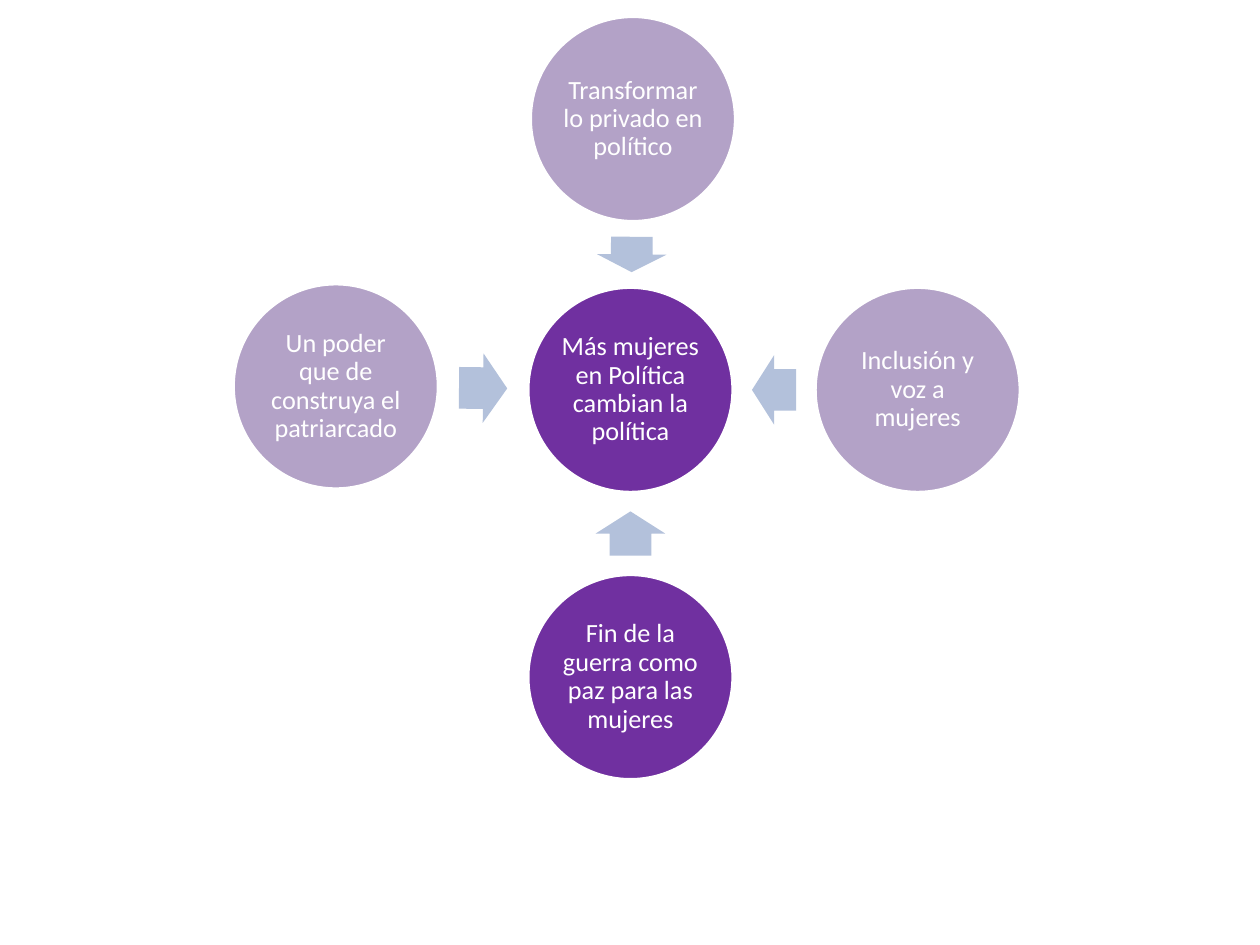
import math
from dataclasses import dataclass

import pptx
import pptx.dml.color
import pptx.enum.shapes
import pptx.enum.text
import pptx.util

Cm = pptx.util.Cm
Pt = pptx.util.Pt
Color = pptx.dml.color.RGBColor
Shape = pptx.enum.shapes.MSO_SHAPE


@dataclass(frozen=True)
class Theme:
    strong: Color = Color(0x70, 0x30, 0xA0)
    soft: Color = Color(0xB3, 0xA2, 0xC7)
    arrow: Color = Color(0xB3, 0xC1, 0xDB)
    white: Color = Color(0xFF, 0xFF, 0xFF)
    font: str = "Calibri"
    size: Pt = Pt(15)
    outline: Pt = Pt(2)


THEME = Theme()
DIAMETER = 4.14
ARROW_HEIGHT = 1.4
ARROW_SHARE = 0.54

CENTER = (12.71, 7.86)
CENTER_TEXT = "Más mujeres en Política cambian la política"
IDEAS = [
    ((6.77, 7.79), "Un poder que de construya el patriarcado", THEME.soft),
    ((18.5, 7.86), "Inclusión y voz a mujeres", THEME.soft),
    ((12.71, 13.65), "Fin de la guerra como paz para las mujeres", THEME.strong),
    ((12.76, 2.4), "Transformar lo privado en político", THEME.soft),
]


def apply(target, values):
    for name, value in values.items():
        setattr(target, name, value)


def add_centered(page, kind, middle, width, height, fill):
    x, y = middle
    shape = page.shapes.add_shape(
        kind, Cm(x - width / 2), Cm(y - height / 2), Cm(width), Cm(height))
    shape.shadow.inherit = False
    shape.fill.solid()
    shape.fill.fore_color.rgb = fill
    return shape


def add_circle(page, middle, text, fill):
    circle = add_centered(page, Shape.OVAL, middle, DIAMETER, DIAMETER, fill)
    circle.line.color.rgb = THEME.white
    circle.line.width = THEME.outline
    frame = circle.text_frame
    margins = ("margin_left", "margin_top", "margin_right", "margin_bottom")
    apply(frame, dict.fromkeys(margins, Cm(0.05)))
    apply(frame, {"word_wrap": True,
                  "vertical_anchor": pptx.enum.text.MSO_ANCHOR.MIDDLE})
    para = frame.paragraphs[0]
    apply(para, {"alignment": pptx.enum.text.PP_ALIGN.CENTER, "line_spacing": 0.9})
    span = para.add_run()
    span.text = text
    apply(span.font, {"name": THEME.font, "size": THEME.size})
    span.font.color.rgb = THEME.white


def add_inward_arrow(page, start):
    dx, dy = CENTER[0] - start[0], CENTER[1] - start[1]
    middle = (start[0] + dx / 2, start[1] + dy / 2)
    length = ARROW_SHARE * (math.hypot(dx, dy) - DIAMETER)
    arrow = add_centered(
        page, Shape.RIGHT_ARROW, middle, length, ARROW_HEIGHT, THEME.arrow)
    arrow.line.fill.background()
    arrow.adjustments[0] = 0.6
    arrow.adjustments[1] = 0.5
    arrow.rotation = math.degrees(math.atan2(dy, dx)) % 360


def main():
    deck = pptx.Presentation()
    apply(deck, {"slide_width": Cm(25.4), "slide_height": Cm(19.05)})
    page = deck.slides.add_slide(deck.slide_layouts[6])
    add_circle(page, CENTER, CENTER_TEXT, THEME.strong)
    for middle, text, fill in IDEAS:
        add_inward_arrow(page, middle)
        add_circle(page, middle, text, fill)
    deck.save("out.pptx")


if __name__ == "__main__":
    main()
